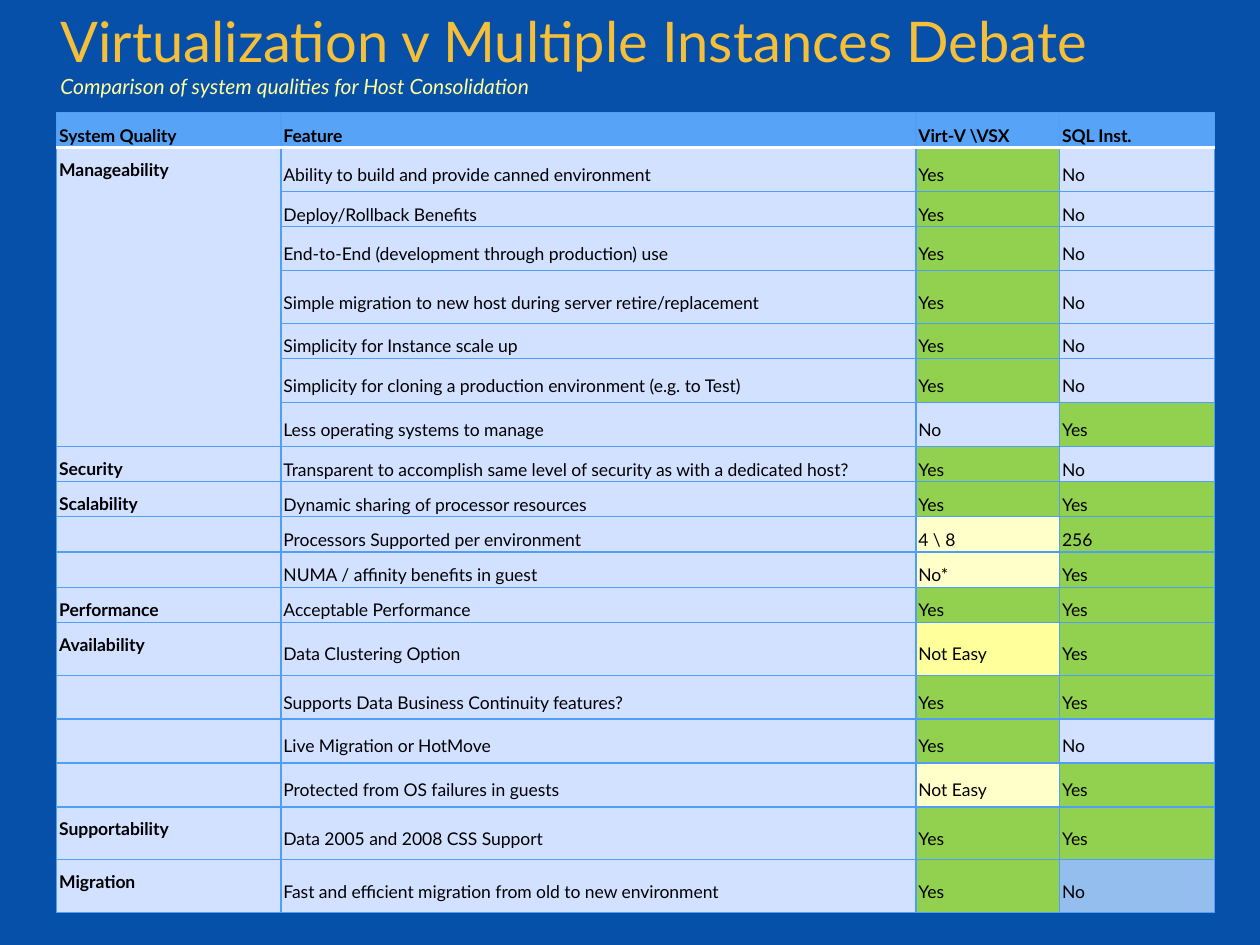
from lxml.etree import SubElement
from pptx import Presentation
from pptx.dml.color import RGBColor
from pptx.enum.text import MSO_ANCHOR, MSO_AUTO_SIZE, PP_ALIGN
from pptx.oxml.ns import qn
from pptx.util import Inches, Pt

W, H = Inches(10), Inches(7.5)
FONT = "Lato"
BACK, GRID, HEAD, BODY = "0750A9", "509FF6", "56A3F8", "D2E1FF"
GREEN, PALE = "92D050", "FFFFCA"

# Answers that colour their cell, and the two cells that differ
ANSWER_FILLS = {"Yes": GREEN, "256": GREEN, "4 \\ 8": PALE, "No*": PALE, "Not Easy": PALE}
SPECIAL_FILLS = {(13, 2): "FFFF9C", (18, 3): "94BEED"}

COLUMNS = [1.78, 5.04, 1.14, 1.23]
MANAGEABILITY_ROWS = (1, 7)

# Row height in grid units, then the four cells
ROWS = [
    (4, "System Quality", "Feature", "Virt-V \\VSX", "SQL Inst."),
    (5, "Manageability", "Ability to build and provide canned environment", "Yes", "No"),
    (4, "", "Deploy/Rollback Benefits", "Yes", "No"),
    (5, "", "End-to-End (development through production) use", "Yes", "No"),
    (6, "", "Simple migration to new host during server retire/replacement", "Yes", "No"),
    (4, "", "Simplicity for Instance scale up", "Yes", "No"),
    (5, "", "Simplicity for cloning a production environment (e.g. to Test)", "Yes", "No"),
    (5, "", "Less operating systems to manage", "No", "Yes"),
    (4, "Security", "Transparent to accomplish same level of security as with a dedicated host?",
     "Yes", "No"),
    (4, "Scalability", "Dynamic sharing of processor resources", "Yes", "Yes"),
    (4, "", "Processors Supported per environment", "4 \\ 8", "256"),
    (4, "", "NUMA / affinity benefits in guest", "No*", "Yes"),
    (4, "Performance", "Acceptable Performance", "Yes", "Yes"),
    (6, "Availability", "Data Clustering Option", "Not Easy", "Yes"),
    (5, "", "Supports Data Business Continuity features?", "Yes", "Yes"),
    (5, "", "Live Migration or HotMove", "Yes", "No"),
    (5, "", "Protected from OS failures in guests", "Not Easy", "Yes"),
    (6, "Supportability", "Data 2005 and 2008 CSS Support", "Yes", "Yes"),
    (6, "Migration", "Fast and efficient migration from old to new environment", "Yes", "No"),
]


def rgb(color):
    return RGBColor.from_string(color)


def set_attrs(obj, values):
    for name, value in values.items():
        setattr(obj, name, value)


def add_run(p, text, size, color, **style):
    r = p.add_run()
    r.text = text
    set_attrs(r.font, {"name": FONT, "size": Pt(size), **style})
    r.font.color.rgb = rgb(color)


def add_border(cell, side, color, width):
    ln = SubElement(cell._tc.get_or_add_tcPr(), qn("a:" + side), w=str(Pt(width)))
    SubElement(SubElement(ln, qn("a:solidFill")), qn("a:srgbClr"), val=color)


def add_title(s):
    title = s.shapes.title
    set_attrs(title, {"left": int(W * 0.038), "top": 0,
                      "width": int(W * 0.918), "height": int(H * 0.112)})
    tf = title.text_frame
    set_attrs(tf, {"word_wrap": True, "vertical_anchor": MSO_ANCHOR.TOP,
                   "auto_size": MSO_AUTO_SIZE.SHAPE_TO_FIT_TEXT})
    p = tf.paragraphs[0]
    p.alignment = PP_ALIGN.LEFT
    add_run(p, "Virtualization v Multiple Instances Debate", 32, "F5BF39")
    p.add_line_break()
    add_run(p, "Comparison of system qualities for Host Consolidation", 12, "FFFF9C",
            italic=True)


def format_cell(cell, row, col, text):
    # Borders come before the fill; a white rule parts header and body
    rules = {"lnL": False, "lnR": False, "lnT": row == 1, "lnB": row == 0}
    for side, white in rules.items():
        add_border(cell, side, *(("FFFFFF", 2) if white else (GRID, 0.75)))
    fill = HEAD if row == 0 else ANSWER_FILLS.get(text, BODY)
    cell.fill.solid()
    cell.fill.fore_color.rgb = rgb(SPECIAL_FILLS.get((row, col), fill))

    top = col == 0 and row > 0
    set_attrs(cell, {"margin_left": Inches(0.02), "margin_right": Inches(0.02),
                     "margin_top": Inches(0.01), "margin_bottom": Inches(0.01),
                     "vertical_anchor": MSO_ANCHOR.TOP if top else MSO_ANCHOR.MIDDLE})
    p = cell.text_frame.paragraphs[0]
    p.line_spacing = 1.5
    if text:
        add_run(p, text, 10, "000000", bold=row == 0 or col == 0)
    else:
        # Keeps an empty cell from stretching its row
        SubElement(p._p, qn("a:endParaRPr"), sz="1000")


def add_comparison(s):
    width, height = int(W * 0.919), int(H * 0.847)
    table = s.shapes.add_table(len(ROWS), len(COLUMNS), int(W * 0.045), int(H * 0.119),
                               width, height).table
    table.horz_banding = False
    for column, share in zip(table.columns, COLUMNS):
        column.width = int(width * share / sum(COLUMNS))
    unit = height / sum(row[0] for row in ROWS)
    for i, (units, *texts) in enumerate(ROWS):
        table.rows[i].height = int(unit * units)
        for j, text in enumerate(texts):
            format_cell(table.cell(i, j), i, j, text)
    first, last = MANAGEABILITY_ROWS
    table.cell(first, 0).merge(table.cell(last, 0))


def main():
    prs = Presentation()
    set_attrs(prs, {"slide_width": W, "slide_height": H})
    s = prs.slides.add_slide(prs.slide_layouts[5])
    s.background.fill.solid()
    s.background.fill.fore_color.rgb = rgb(BACK)
    add_title(s)
    add_comparison(s)
    prs.save("out.pptx")


if __name__ == "__main__":
    main()
